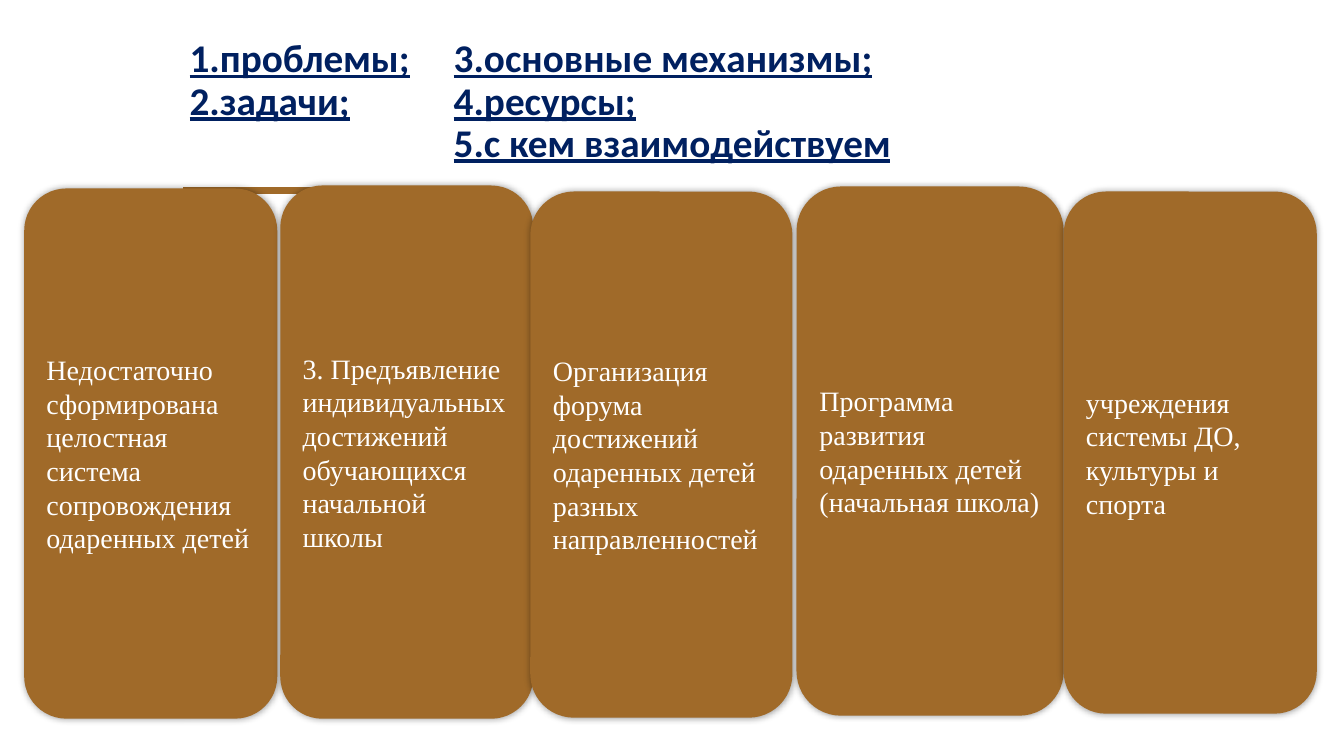
from dataclasses import dataclass

from lxml.etree import SubElement
from pptx import Presentation
from pptx.dml.color import RGBColor
from pptx.enum.shapes import MSO_CONNECTOR, MSO_SHAPE
from pptx.enum.text import MSO_ANCHOR, MSO_AUTO_SIZE, PP_ALIGN
from pptx.oxml.ns import qn
from pptx.slide import Slide
from pptx.util import Inches, Pt


@dataclass(frozen=True)
class Theme:
    navy: RGBColor = RGBColor(0x00, 0x20, 0x60)
    brown: RGBColor = RGBColor(0xA0, 0x6A, 0x29)
    white: RGBColor = RGBColor(0xFF, 0xFF, 0xFF)
    shade: str = "000000"
    head_font: str = "Calibri"
    card_font: str = "Times New Roman"
    head_size: Pt = Pt(28)
    card_size: Pt = Pt(20)
    rule_width: Pt = Pt(5)
    blur: Pt = Pt(5)


@dataclass(frozen=True)
class Card:
    left: float
    top: float
    width: float
    height: float
    text: str


THEME = Theme()
TOPICS = [
    "1.проблемы;\t3.основные механизмы;",
    "2.задачи;\t4.ресурсы;",
    "\t5.с кем взаимодействуем",
]
CARDS = [
    Card(0.24, 1.87, 2.51, 5.26, "Недостаточно сформирована целостная система сопровождения одаренных детей"),
    Card(2.78, 1.84, 2.51, 5.29, "3. Предъявление индивидуальных достижений обучающихся начальной школы"),
    Card(5.26, 1.9, 2.6, 5.22, "Организация форума достижений одаренных детей разных направленностей"),
    Card(7.9, 1.85, 2.65, 5.25, "Программа развития одаренных детей (начальная школа)"),
    Card(10.55, 1.9, 2.51, 5.18, "учреждения системы ДО, культуры и спорта"),
]


def draw_title(slide: Slide) -> None:
    title = slide.shapes.title
    title.left, title.top = Inches(1.78), Inches(0.18)
    title.width, title.height = Inches(10.64), Inches(1.67)
    frame = title.text_frame
    frame.word_wrap = True
    frame.auto_size = MSO_AUTO_SIZE.NONE
    frame.vertical_anchor = MSO_ANCHOR.MIDDLE
    para = frame.paragraphs[0]
    tabs = SubElement(para._p.get_or_add_pPr(), qn("a:tabLst"))
    SubElement(tabs, qn("a:tab"), pos=str(Inches(2.62)), algn="l")
    para.alignment = PP_ALIGN.LEFT
    para.line_spacing = 0.9
    for index, topic in enumerate(TOPICS):
        if index:
            para.add_line_break()
        run = para.add_run()
        run.text = topic
        font = run.font
        font.name, font.size = THEME.head_font, THEME.head_size
        font.bold = font.underline = True
        font.color.rgb = THEME.navy


def draw_rule(slide: Slide) -> None:
    level = Inches(1.89)
    rule = slide.shapes.add_connector(
        MSO_CONNECTOR.STRAIGHT, Inches(1.82), level, Inches(4.43), level
    )
    rule.line.color.rgb = THEME.brown
    rule.line.width = THEME.rule_width
    SubElement(rule._element.spPr, qn("a:effectLst"))


def draw_card(slide: Slide, card: Card) -> None:
    box = slide.shapes.add_shape(
        MSO_SHAPE.ROUNDED_RECTANGLE,
        Inches(card.left), Inches(card.top), Inches(card.width), Inches(card.height),
    )
    box.fill.solid()
    box.fill.fore_color.rgb = THEME.brown
    box.line.fill.background()
    box.shadow.inherit = False
    effects = box._element.spPr.find(qn("a:effectLst"))
    shadow = SubElement(
        effects, qn("a:outerShdw"), blurRad=str(THEME.blur), dist="0", dir="0", rotWithShape="0"
    )
    color = SubElement(shadow, qn("a:srgbClr"), val=THEME.shade)
    SubElement(color, qn("a:alpha"), val="40000")
    frame = box.text_frame
    frame.word_wrap = True
    frame.vertical_anchor = MSO_ANCHOR.MIDDLE
    para = frame.paragraphs[0]
    para.alignment = PP_ALIGN.LEFT
    run = para.add_run()
    run.text = card.text
    run.font.name, run.font.size = THEME.card_font, THEME.card_size
    run.font.color.rgb = THEME.white


def main() -> None:
    deck = Presentation()
    deck.slide_width, deck.slide_height = Inches(13.33), Inches(7.5)
    slide = deck.slides.add_slide(deck.slide_layouts.get_by_name("Title Only"))
    draw_title(slide)
    draw_rule(slide)
    for card in CARDS:
        draw_card(slide, card)
    deck.save("out.pptx")


if __name__ == "__main__":
    main()
